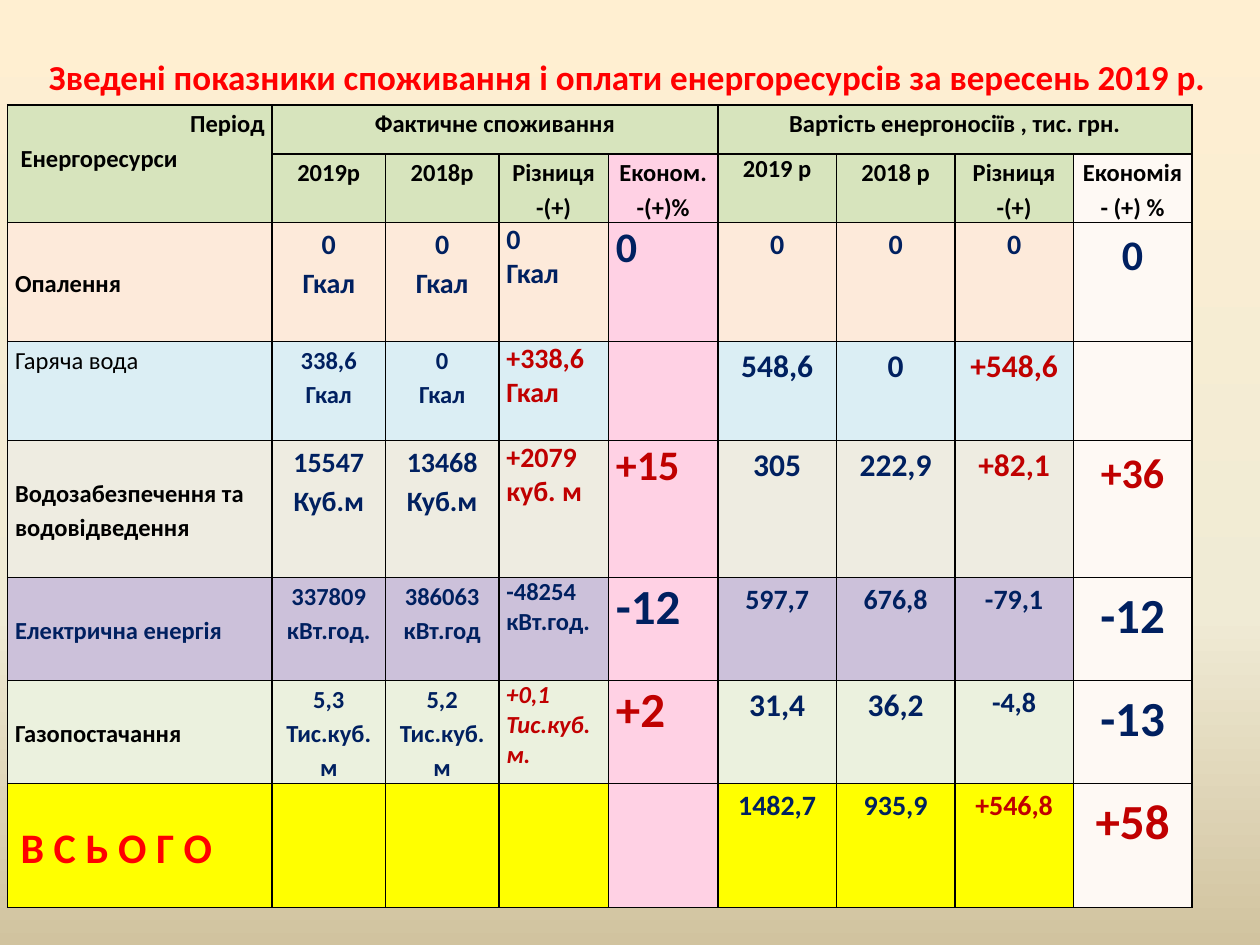
"""Build the monthly energy consumption and payment summary slide."""
from copy import deepcopy
from dataclasses import dataclass, field

from lxml import etree
from pptx import Presentation
from pptx.dml.color import RGBColor
from pptx.enum.text import MSO_ANCHOR, PP_ALIGN
from pptx.oxml.ns import qn
from pptx.slide import Slide
from pptx.table import Table, _Cell
from pptx.text.text import TextFrame
from pptx.util import Pt

LEFT, CENTER, RIGHT = PP_ALIGN.LEFT, PP_ALIGN.CENTER, PP_ALIGN.RIGHT
TOP, MIDDLE = MSO_ANCHOR.TOP, MSO_ANCHOR.MIDDLE


@dataclass(frozen=True)
class Theme:
    font: str = "Calibri"
    black: str = "000000"
    navy: str = "002060"
    red: str = "C00000"
    bright_red: str = "FF0000"
    header: str = "D7E4BD"
    saving_volume: str = "FFD1E4"
    saving_cost: str = "FEF9F4"
    heating: str = "FDEADA"
    hot_water: str = "DBEEF4"
    water: str = "EEECE1"
    electricity: str = "CCC1DA"
    gas: str = "EBF1DE"
    total: str = "FFFF00"
    background: tuple[tuple[float, str], ...] = (
        (0, "FFEFD1"), (0.65, "F0EBD5"), (1, "D1C39F"))
    small: int = 14
    medium: int = 16
    large: int = 18
    heading: int = 20
    big: int = 24
    huge: int = 28


THEME = Theme()
COLUMN_WIDTHS = (151.2, 64.8, 64.8, 62.6, 62.6, 67.7, 67.7, 67.7, 67.7)
ROW_HEIGHTS = (28, 38.9, 68, 56.6, 78.3, 58.9, 58.9, 70.9)
SAVING_FILLS = {4: THEME.saving_volume, 8: THEME.saving_cost}
LEFT_COLUMNS = (3, 4)


@dataclass(frozen=True)
class Line:
    text: str
    size: int = THEME.small
    color: str = THEME.black
    bold: bool = True
    italic: bool = False
    align: PP_ALIGN = CENTER
    spacing: float = 1.15
    indent: float = 0


@dataclass(frozen=True)
class Value:
    text: str
    size: int
    color: str = THEME.navy
    italic: bool = False


@dataclass(frozen=True)
class Resource:
    label: Line
    fill: str
    values: tuple[Value | None, ...] = field(default=())
    anchor: MSO_ANCHOR = MIDDLE


SMALL, MEDIUM, LARGE, BIG, HUGE = (
    THEME.small, THEME.medium, THEME.large, THEME.big, THEME.huge)
RED = THEME.red

SUBHEADERS = ("2019р", "2018р", "Різниця\n-(+)", "Економ.\n-(+)%",
              "2019 р", "2018 р", "Різниця\n-(+)", "Економія\n- (+) %")

RESOURCES = (
    Resource(Line("Опалення", align=LEFT), THEME.heating, (
        Value("0\nГкал", MEDIUM), Value("0\nГкал", MEDIUM),
        Value("0\nГкал", MEDIUM), Value("0", BIG),
        Value("0", MEDIUM), Value("0", MEDIUM),
        Value("0", MEDIUM), Value("0", BIG))),
    Resource(Line("Гаряча вода", bold=False, align=LEFT), THEME.hot_water, (
        Value("338,6\nГкал", SMALL), Value("0\nГкал", SMALL),
        Value("+338,6\nГкал", MEDIUM, RED), None,
        Value("548,6", LARGE), Value("0", LARGE),
        Value("+548,6", LARGE, RED), None), TOP),
    Resource(Line("Водозабезпечення та водовідведення", align=LEFT), THEME.water, (
        Value("15547\nКуб.м", MEDIUM), Value("13468\nКуб.м", MEDIUM),
        Value("+2079\nкуб. м", MEDIUM, RED), Value("+15", BIG, RED),
        Value("305", LARGE), Value("222,9", LARGE),
        Value("+82,1", LARGE, RED), Value("+36", BIG, RED))),
    Resource(Line("Електрична енергія", color=THEME.navy, align=LEFT), THEME.electricity, (
        Value("337809\nкВт.год.", SMALL), Value("386063\nкВт.год", SMALL),
        Value("-48254\nкВт.год.", SMALL), Value("-12", HUGE),
        Value("597,7", MEDIUM), Value("676,8", MEDIUM),
        Value("-79,1", MEDIUM), Value("-12", HUGE))),
    Resource(Line("Газопостачання", align=LEFT), THEME.gas, (
        Value("5,3\nТис.куб.м", SMALL), Value("5,2\nТис.куб.м", SMALL),
        Value("+0,1\nТис.куб.м.", SMALL, RED, True), Value("+2", HUGE, RED),
        Value("31,4", LARGE), Value("36,2", LARGE),
        Value("-4,8", MEDIUM), Value("-13", HUGE))),
    Resource(Line("В С Ь О Г О", BIG, THEME.bright_red, align=LEFT, indent=3.2), THEME.total, (
        None, None, None, None,
        Value("1482,7", MEDIUM), Value("935,9", MEDIUM),
        Value("+546,8", MEDIUM, RED), Value("+58", HUGE, RED))),
)


def write_lines(frame: TextFrame, lines: list[Line]) -> None:
    """Write one paragraph with a single run for each line."""
    for index, line in enumerate(lines):
        paragraph = frame.add_paragraph() if index else frame.paragraphs[0]
        paragraph.alignment = line.align
        paragraph.line_spacing = line.spacing
        if line.indent:
            paragraph._p.get_or_add_pPr().set("marL", str(Pt(line.indent)))
        run = paragraph.add_run()
        run.text = line.text
        font = run.font
        font.name, font.size = THEME.font, Pt(line.size)
        font.bold, font.italic = line.bold, line.italic
        font.color.rgb = RGBColor.from_string(line.color)


def format_cell(cell: _Cell, fill: str) -> None:
    """Set the margins, black borders and fill of a cell."""
    cell.margin_left = cell.margin_right = Pt(4.3)
    cell.margin_top = cell.margin_bottom = Pt(0)
    properties = cell._tc.get_or_add_tcPr()
    for side in ("a:lnL", "a:lnR", "a:lnT", "a:lnB"):
        border = etree.SubElement(properties, qn(side), w=str(Pt(1)))
        solid = etree.SubElement(border, qn("a:solidFill"))
        etree.SubElement(solid, qn("a:srgbClr"), val=THEME.black)
    cell.fill.solid()
    cell.fill.fore_color.rgb = RGBColor.from_string(fill)


def fill_header(table: Table) -> None:
    """Merge and fill the two header rows."""
    table.cell(0, 0).merge(table.cell(1, 0))
    write_lines(table.cell(0, 0).text_frame, [
        Line("Період", align=RIGHT), Line("Енергоресурси", align=LEFT, indent=3.2)])
    for column, text in ((1, "Фактичне споживання"), (5, "Вартість енергоносіїв , тис. грн.")):
        table.cell(0, column).merge(table.cell(0, column + 3))
        write_lines(table.cell(0, column).text_frame, [Line(text)])
    for column, text in enumerate(SUBHEADERS, 1):
        spacing = 1 if column == 5 else 1.15
        write_lines(table.cell(1, column).text_frame,
                    [Line(part, spacing=spacing) for part in text.split("\n")])


def fill_resource(table: Table, row: int, resource: Resource) -> None:
    """Write the label and the values of one resource."""
    label_cell = table.cell(row, 0)
    label_cell.vertical_anchor = resource.anchor
    write_lines(label_cell.text_frame, [resource.label])
    for column, value in enumerate(resource.values, 1):
        if value is None:
            continue
        align, spacing = (LEFT, 1) if column in LEFT_COLUMNS else (CENTER, 1.15)
        write_lines(table.cell(row, column).text_frame, [
            Line(part, value.size, value.color, italic=value.italic, align=align, spacing=spacing)
            for part in value.text.split("\n")])


def add_summary_table(slide: Slide) -> None:
    """Add the consumption and cost table."""
    table = slide.shapes.add_table(
        len(ROW_HEIGHTS), len(COLUMN_WIDTHS), Pt(4.3), Pt(60),
        Pt(sum(COLUMN_WIDTHS)), Pt(sum(ROW_HEIGHTS))).table
    table.first_row = table.horz_banding = False
    for column, width in zip(table.columns, COLUMN_WIDTHS):
        column.width = Pt(width)
    row_fills = [THEME.header] * 2 + [resource.fill for resource in RESOURCES]
    for row, (height, row_fill) in enumerate(zip(ROW_HEIGHTS, row_fills)):
        table.rows[row].height = Pt(height)
        for column in range(len(COLUMN_WIDTHS)):
            fill = SAVING_FILLS.get(column, row_fill) if row else row_fill
            format_cell(table.cell(row, column), fill)
    fill_header(table)
    for row, resource in enumerate(RESOURCES, 2):
        fill_resource(table, row, resource)


def paint_background(slide: Slide) -> None:
    """Fill the background with a vertical gradient."""
    fill = slide.background.fill
    fill.gradient()
    fill.gradient_angle = 270
    stop_list = next(slide._element.iter(qn("a:gsLst")))
    stop_list.append(deepcopy(stop_list[-1]))
    for stop, (position, color) in zip(fill.gradient_stops, THEME.background):
        stop.position = position
        stop.color.rgb = RGBColor.from_string(color)


def add_title(slide: Slide) -> None:
    """Add the slide heading."""
    frame = slide.shapes.add_textbox(Pt(2.9), Pt(28.1), Pt(697.7), Pt(31.7)).text_frame
    frame.word_wrap = True
    write_lines(frame, [Line(
        "Зведені показники споживання і оплати енергоресурсів за вересень 2019 р.",
        THEME.heading, THEME.bright_red, align=LEFT, spacing=1, indent=18)])


def main() -> None:
    """Build and save the presentation."""
    presentation = Presentation()
    presentation.slide_width, presentation.slide_height = Pt(720), Pt(540)
    slide = presentation.slides.add_slide(presentation.slide_layouts[6])
    paint_background(slide)
    add_summary_table(slide)
    add_title(slide)
    presentation.save("out.pptx")


if __name__ == "__main__":
    main()
